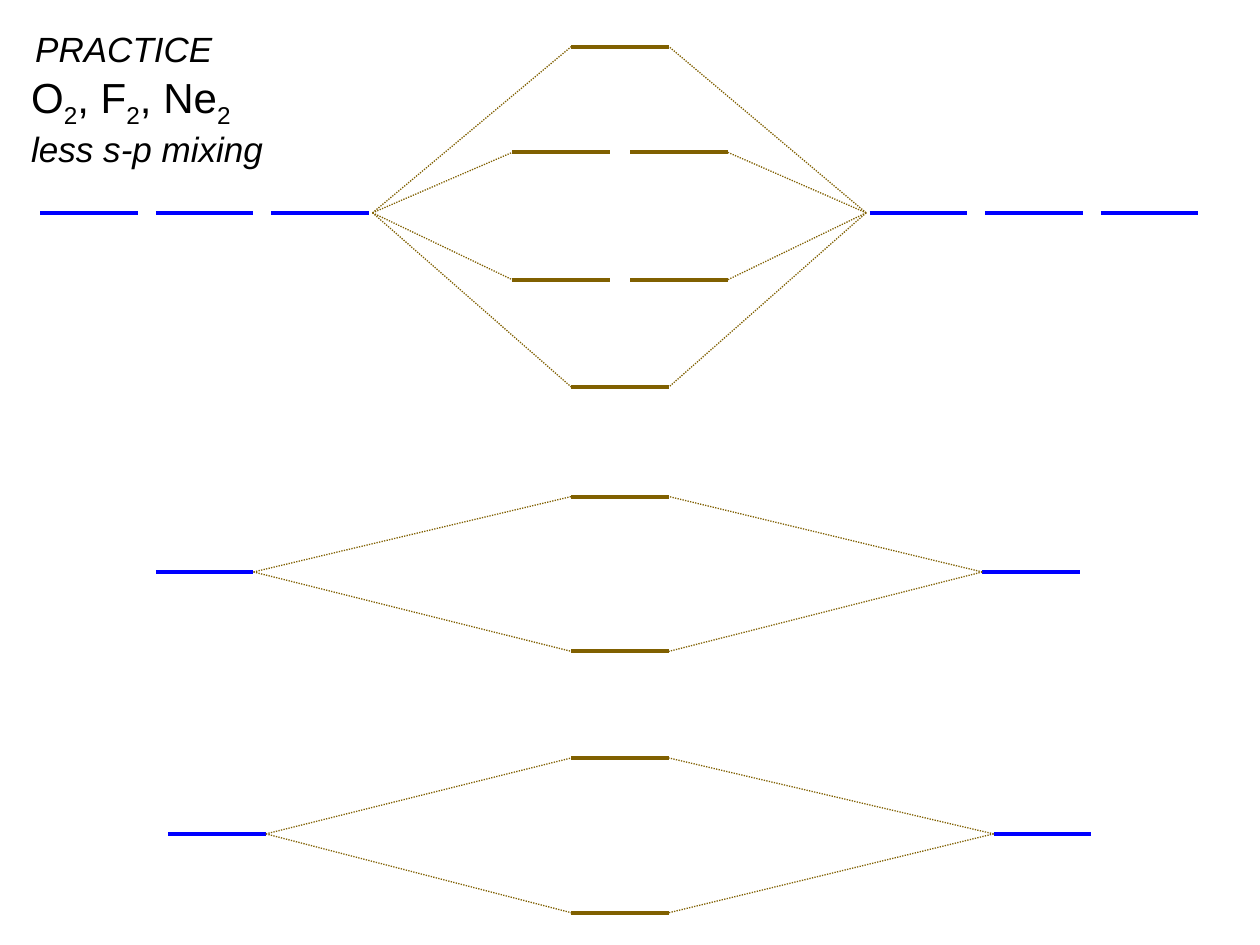
from pptx import Presentation
from pptx.dml.color import RGBColor
from pptx.enum.dml import MSO_LINE
from pptx.enum.shapes import MSO_CONNECTOR
from pptx.enum.text import MSO_AUTO_SIZE
from pptx.oxml.ns import qn
from pptx.util import Cm, Pt
from lxml.etree import SubElement

# Content: each set of orbitals, with heights and left edges in cm
# mixed = (height, number of levels side by side)
SETS = [
    dict(y=4.29, left=0.81, right=17.53, count=3, gap=0.07,
         mixed=[(0.94, 1), (3.07, 2), (5.64, 2), (7.80, 1)]),
    dict(y=11.53, left=3.14, right=19.80, count=1, gap=0,
         mixed=[(10.01, 1), (13.13, 1)]),
    dict(y=16.81, left=3.39, right=20.03, count=1, gap=0,
         mixed=[(15.28, 1), (18.40, 1)]),
]
# Labels: (left, top, width, height), style, runs as (text, is subscript)
LABELS = [
    ((0.38, 1.32, 4.67, 1.27), "title",
     [("O", False), ("2", True), (", F", False), ("2", True),
      (", Ne", False), ("2", True)]),
    ((0.38, 2.44, 5.23, 1.12), "note", [("less s-p mixing", False)]),
    ((0.46, 0.43, 4.11, 1.12), "note", [("PRACTICE", False)]),
]

BLACK = RGBColor(0, 0, 0)
GOLD = RGBColor(0x80, 0x60, 0x00)
THEME = {
    "atom": dict(color=RGBColor(0, 0, 0xFF), width=Pt(2.25), dash=None),
    "bond": dict(color=GOLD, width=Pt(2.25), dash=None),
    "link": dict(color=GOLD, width=Pt(0.75), dash=MSO_LINE.ROUND_DOT),
    "title": dict(name="Arial", size=Pt(24), italic=False),
    "note": dict(name="Arial", size=Pt(20), italic=True),
}
BAR, MID = 1.97, 12.50         # level length, centre of the diagram
STEP, PAIR = 2.33, 2.37        # spacing of atomic levels, of paired levels


def draw_line(shapes, start, end, style):
    line = shapes.add_connector(MSO_CONNECTOR.STRAIGHT,
                                *map(Cm, (*start, *end)))
    look = THEME[style]
    line.line.color.rgb = look["color"]
    line.line.width = look["width"]
    if look["dash"]:
        line.line.dash_style = look["dash"]
    SubElement(line._element.spPr, qn("a:effectLst"))


def draw_row(shapes, left, y, count, step, style):
    for i in range(count):
        x = left + i * step
        draw_line(shapes, (x, y), (x + BAR, y), style)


def draw_set(shapes, y, left, right, count, gap, mixed):
    # Atomic levels on both sides
    for x in (left, right):
        draw_row(shapes, x, y, count, STEP, "atom")
    hubs = (left + (count - 1) * STEP + BAR + gap, right - gap)

    # Molecular levels and the dotted links to the atoms
    for level, num in mixed:
        span = (num - 1) * PAIR + BAR
        edges = (MID - span / 2, MID + span / 2)
        home = shapes.add_group_shape().shapes if num > 1 else shapes
        draw_row(home, edges[0], level, num, PAIR, "bond")
        for hub, edge in zip(hubs, edges):
            draw_line(shapes, (hub, y), (edge, level), "link")


def draw_label(shapes, box, style, runs):
    frame = shapes.add_textbox(*map(Cm, box)).text_frame
    frame.word_wrap = False
    frame.auto_size = MSO_AUTO_SIZE.SHAPE_TO_FIT_TEXT
    para = frame.paragraphs[0]
    for text, sub in runs:
        run = para.add_run()
        run.text = text
        for key, value in THEME[style].items():
            setattr(run.font, key, value)
        run.font.color.rgb = BLACK
        if sub:
            run._r.get_or_add_rPr().set("baseline", "-25000")


def main():
    deck = Presentation()
    deck.slide_width, deck.slide_height = Cm(25.4), Cm(19.05)
    shapes = deck.slides.add_slide(deck.slide_layouts[6]).shapes
    for group in SETS:
        draw_set(shapes, **group)
    for label in LABELS:
        draw_label(shapes, *label)
    deck.save("out.pptx")


if __name__ == "__main__":
    main()
